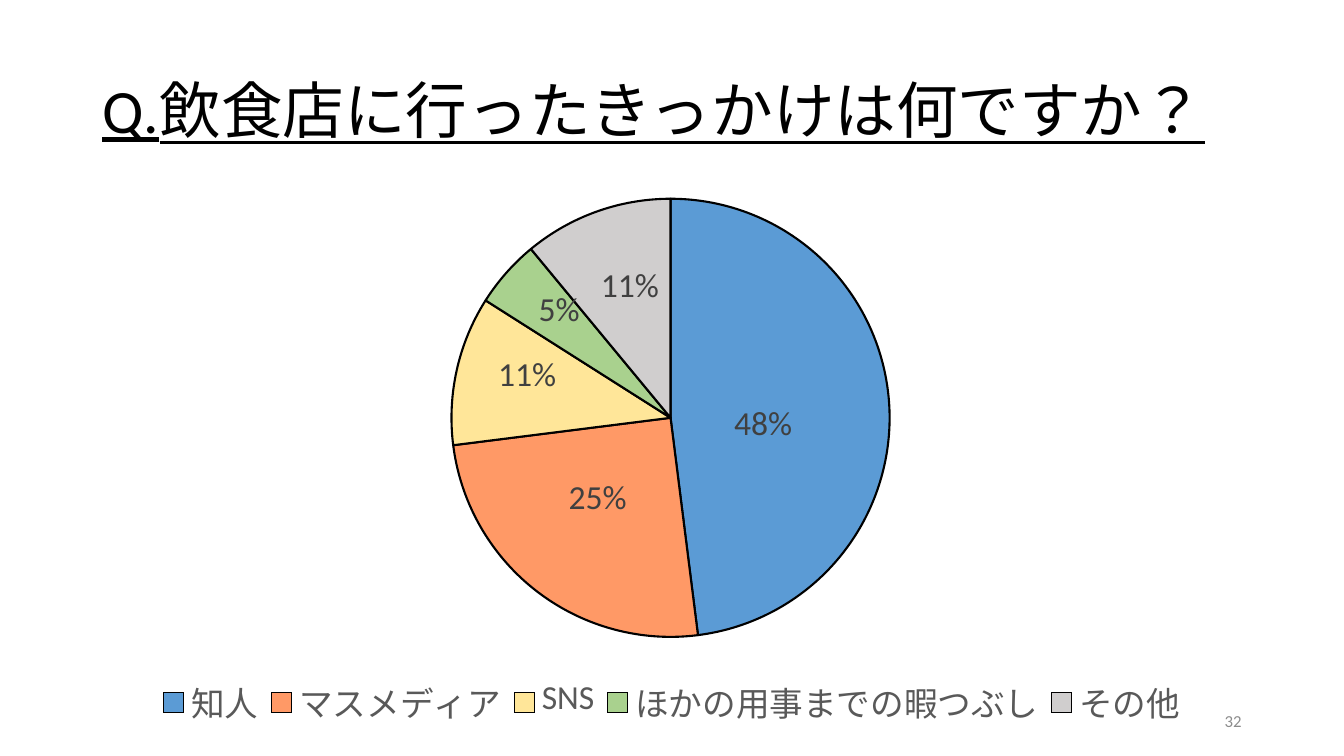
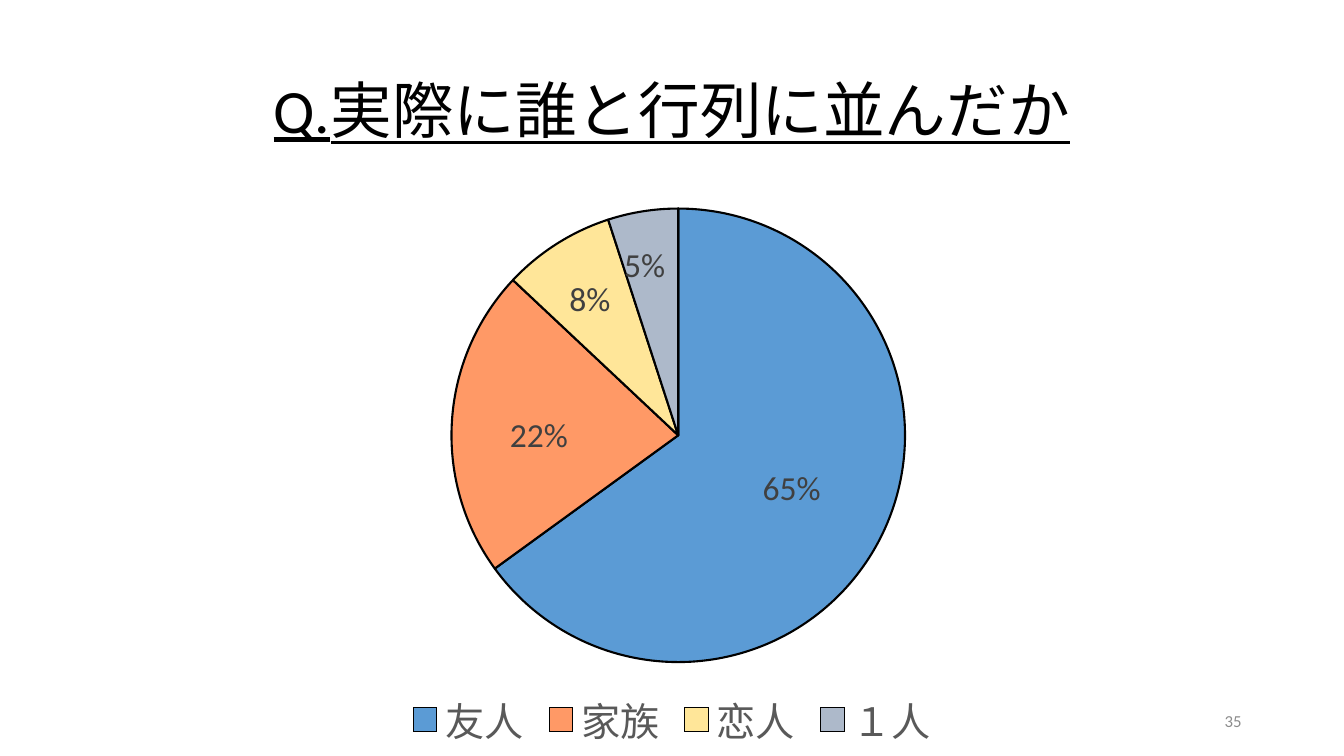
import math
from lxml import etree
from pptx import Presentation
from pptx.chart.data import CategoryChartData
from pptx.dml.color import RGBColor
from pptx.enum import chart as charts, lang, text
from pptx.oxml.ns import qn
from pptx.util import Pt

COLORS = {
    "black": "000000", "number": "8C8C8C", "legend": "595959", "label": "404040",
    "blue": "5B9BD5", "orange": "FF9966", "yellow": "FFE699",
    "green": "A9D18E", "grey": "D0CECE", "slate": "ADB9CA",
}
FONT = "Calibri"
LEFT, WIDTH = 66, 828
LABEL_HEIGHT, DIGIT_WIDTH, PERCENT_WIDTH = 29.3, 12.2, 17
LABEL_GAP = 4.25  # default distance of an outside label from the rim

# In points on the slide: frame is (top, height), pie is (left, top, diameter);
# each slice has a name, a share, a colour and the centre of its label
QUESTIONS = [
    dict(title="Q.飲食店に行ったきっかけは何ですか？", align=text.PP_ALIGN.LEFT,
         number="32", frame=(103.7, 425.5), pie=(322.5, 142, 313),
         legend_size=24, legend_box=(0.05, 0.88, 0.9, 0.11),
         slices=[("知人", 0.48, "blue", (545, 303.5)),
                 ("マスメディア", 0.25, "orange", (427, 356.5)),
                 ("SNS", 0.11, "yellow", (376.5, 268)),
                 ("ほかの用事までの暇つぶし", 0.05, "green", (399.5, 221.5)),
                 ("その他", 0.11, "grey", (450, 205))]),
    dict(title="Q.実際に誰と行列に並んだか", align=text.PP_ALIGN.CENTER,
         number="35", frame=(106.5, 433.5), pie=(322.5, 149, 324),
         legend_size=28, legend_box=None,
         slices=[("友人", 0.65, "blue", (565.5, 349.5)),
                 ("家族", 0.22, "orange", (385, 311.5)),
                 ("恋人", 0.08, "yellow", (421.5, 214.5)),
                 ("１人", 0.05, "slate", (460.5, 190))]),
]


def set_font(font, size, color):
    font.name = FONT
    font.size = Pt(size)
    font.color.rgb = RGBColor.from_string(COLORS[color])


def set_layout(parent, position, **settings):
    """Give a chart part a manual layout, in fractions of the chart frame."""
    for layout in parent.findall(qn("c:layout")):
        parent.remove(layout)
    layout = etree.Element(qn("c:layout"))
    manual = etree.SubElement(layout, qn("c:manualLayout"))
    for tag, value in settings.items():
        value = value if isinstance(value, str) else f"{value:.4f}"
        etree.SubElement(manual, qn("c:" + tag)).set("val", value)
    parent.insert(position, layout)


presentation = Presentation()
presentation.slide_width, presentation.slide_height = Pt(960), Pt(540)
title_only = presentation.slide_layouts[5]

for question in QUESTIONS:
    slide = presentation.slides.add_slide(title_only)

    # Title
    title = slide.shapes.title
    title.left, title.top, title.width, title.height = Pt(LEFT), Pt(28.8), Pt(WIDTH), Pt(104.4)
    title.text_frame.text = question["title"]
    title.text_frame.vertical_anchor = text.MSO_ANCHOR.MIDDLE
    paragraph = title.text_frame.paragraphs[0]
    paragraph.alignment = question["align"]
    paragraph.line_spacing = 0.9
    set_font(paragraph.font, 44, "black")
    paragraph.runs[0].font.underline = True
    paragraph.runs[0].font.language_id = lang.MSO_LANGUAGE_ID.JAPANESE

    # Slide number
    number = slide.shapes.add_textbox(Pt(678), Pt(500.5), Pt(216), Pt(28.8))
    number.text_frame.word_wrap = True
    number.text_frame.vertical_anchor = text.MSO_ANCHOR.MIDDLE
    number.text_frame.text = question["number"]
    paragraph = number.text_frame.paragraphs[0]
    paragraph.alignment = text.PP_ALIGN.RIGHT
    set_font(paragraph.font, 12, "number")

    # Pie chart
    names, shares, colors, centers = zip(*question["slices"])
    data = CategoryChartData(number_format="0%")
    data.categories = names
    data.add_series("Series 1", shares)
    top, height = question["frame"]
    chart = slide.shapes.add_chart(charts.XL_CHART_TYPE.PIE, Pt(LEFT), Pt(top),
                                   Pt(WIDTH), Pt(height), data).chart
    chart.has_title = False
    set_font(chart.font, 10, "black")
    pie_left, pie_top, diameter = question["pie"]
    set_layout(chart.element.find(".//" + qn("c:plotArea")), 0,
               layoutTarget="inner", xMode="edge", yMode="edge",
               x=(pie_left - LEFT) / WIDTH, y=(pie_top - top) / height,
               w=diameter / WIDTH, h=diameter / height)

    # Legend
    chart.has_legend = True
    chart.legend.position = charts.XL_LEGEND_POSITION.BOTTOM
    chart.legend.include_in_layout = False
    set_font(chart.legend.font, question["legend_size"], "legend")
    if question["legend_box"]:
        x, y, w, h = question["legend_box"]
        set_layout(chart.element.find(".//" + qn("c:legend")), 1,
                   xMode="edge", yMode="edge", x=x, y=y, w=w, h=h)

    # Slices
    chart.plots[0].vary_by_categories = True
    series = chart.plots[0].series[0]
    labels = series.data_labels
    labels.show_value = True
    labels.show_percentage = False
    labels.number_format = "0%"
    labels.number_format_is_linked = False
    labels.position = charts.XL_LABEL_POSITION.BEST_FIT
    set_font(labels.font, 24, "label")
    for index, color in enumerate(colors):
        point = series.points[index]
        point.format.fill.solid()
        point.format.fill.fore_color.rgb = RGBColor.from_string(COLORS[color])
        point.format.line.color.rgb = RGBColor.from_string(COLORS["black"])
        point.format.line.width = Pt(1.5)
        set_font(point.data_label.font, 24, "label")
        point.data_label.position = charts.XL_LABEL_POSITION.BEST_FIT
    for leader_lines in chart.element.iter(qn("c:showLeaderLines")):
        leader_lines.set("val", "0")

    # Labels, each shifted from its default place outside the rim
    radius = diameter / 2
    start = 0
    for label, share, center in zip(chart.element.iter(qn("c:dLbl")), shares, centers):
        angle = 2 * math.pi * (start + share / 2)
        start += share
        directions = math.sin(angle), -math.cos(angle)
        sizes = len(f"{share * 100:.0f}") * DIGIT_WIDTH + PERCENT_WIDTH, LABEL_HEIGHT
        shifts = []
        for edge, direction, size, wanted in zip((pie_left, pie_top), directions, sizes, center):
            side = 0 if abs(direction) < 0.087 else math.copysign(0.5, direction)
            default = edge + radius + (radius + LABEL_GAP) * direction + side * size
            shifts.append(wanted - default)
        set_layout(label, 1, x=shifts[0] / WIDTH, y=shifts[1] / height)

presentation.save("out.pptx")
